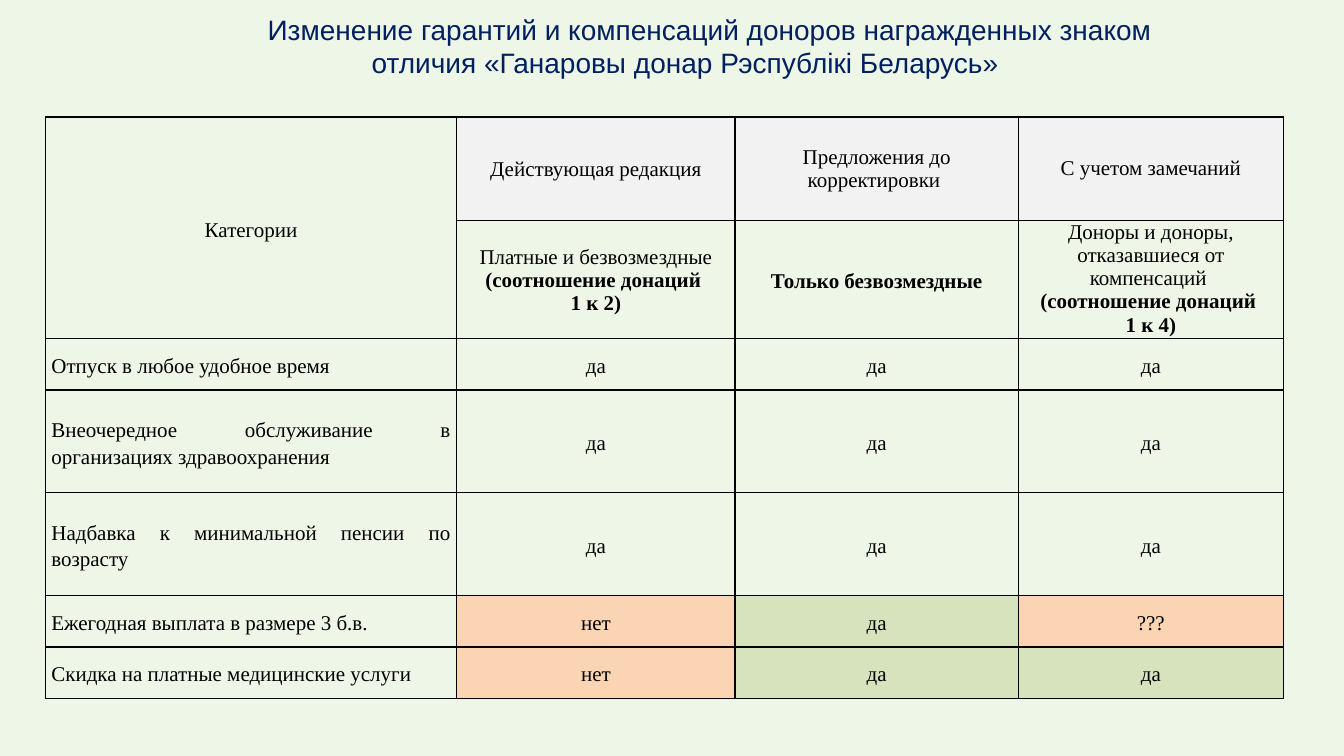
import pptx
import pptx.dml.color
import pptx.enum.text
import pptx.oxml.ns
import pptx.util
from lxml import etree

Inches = pptx.util.Inches
Pt = pptx.util.Pt
ALIGN = pptx.enum.text.PP_ALIGN
ANCHOR = pptx.enum.text.MSO_ANCHOR

COLORS = {
    "background": "EEF6E8",
    "title": "002060",
    "text": "000000",
    "border": "000000",
    "header": "F2F2F2",
    "no": "FBD4B4",
    "yes": "D6E3BC",
}

TITLE = ("Изменение гарантий и компенсаций доноров награжденных знаком "
         "отличия «Ганаровы донар Рэспублiкi Беларусь»")
COLUMN_WIDTHS = [4.08, 2.76, 2.81, 2.63]
ROW_HEIGHTS = [1.03, 1.17, 0.51, 1.02, 1.02, 0.51, 0.51]

LOOSE = {"line_spacing": 1.15, "space_after": Pt(10)}
TIGHT = {"line_spacing": 1.0, "space_after": Pt(0)}

# Each paragraph is a list of (text, bold) runs.
EDITIONS = [
    ([[("Действующая редакция", False)]], {"space_after": Pt(10)}),
    ([[("Предложения до корректировки ", False)]], TIGHT),
    ([[("С учетом замечаний", False)]], TIGHT),
]
RATIO = "(соотношение донаций "
DONATIONS = [
    ([[("Платные и безвозмездные ", False), (RATIO, True)],
      [("1 к 2)", True)]], TIGHT),
    ([[("Только безвозмездные", True)]], LOOSE),
    ([[("Доноры и доноры, отказавшиеся от компенсаций ", False)],
      [(RATIO, True)], [("1 к 4)", True)]], TIGHT),
]
GUARANTEES = [
    ("Отпуск в любое удобное время", ["да", "да", "да"], None),
    ("Внеочередное обслуживание в организациях здравоохранения",
     ["да", "да", "да"], None),
    ("Надбавка к минимальной пенсии по возрасту", ["да", "да", "да"], None),
    ("Ежегодная выплата в размере 3 б.в.", ["нет", "да", "???"],
     ["no", "yes", "no"]),
    ("Скидка на платные медицинские услуги", ["нет", "да", "да"],
     ["no", "yes", "yes"]),
]


def rgb(name):
    return pptx.dml.color.RGBColor.from_string(COLORS[name])


def apply(target, values):
    for name, value in values.items():
        setattr(target, name, value)


class SlideBuilder:
    def __init__(self, prs):
        self.slide = prs.slides.add_slide(prs.slide_layouts[5])
        self.title_font = {"name": "Arial", "size": Pt(20), "bold": False}
        self.cell_font = {"name": "Times New Roman", "size": Pt(15)}
        fill = self.slide.background.fill
        fill.solid()
        fill.fore_color.rgb = rgb("background")

    def title(self, text, left, top, width, height):
        sp = self.slide.shapes.title
        apply(sp, {"left": Inches(left), "top": Inches(top),
                   "width": Inches(width), "height": Inches(height)})
        tf = sp.text_frame
        apply(tf, {"word_wrap": True, "vertical_anchor": ANCHOR.MIDDLE,
                   "auto_size": pptx.enum.text.MSO_AUTO_SIZE.NONE})
        p = tf.paragraphs[0]
        p.alignment = ALIGN.CENTER
        p._p.get_or_add_pPr().set("indent", str(Inches(0.49)))
        self.run(p, text, self.title_font, "title")

    def run(self, p, text, font, color):
        r = p.add_run()
        r.text = text
        apply(r.font, font)
        r.font.color.rgb = rgb(color)

    def table(self, left, top, widths, heights):
        table = self.slide.shapes.add_table(
            len(heights), len(widths), Inches(left), Inches(top),
            Inches(sum(widths)), Inches(sum(heights))).table
        apply(table, {"first_row": False, "horz_banding": False})
        for column, width in zip(table.columns, widths):
            column.width = Inches(width)
        for row, height in zip(table.rows, heights):
            row.height = Inches(height)
        for cell in table.iter_cells():
            self.borders(cell)
            cell.fill.background()
        return table

    def borders(self, cell):
        qn = pptx.oxml.ns.qn
        tcPr = cell._tc.get_or_add_tcPr()
        for side in ("lnL", "lnR", "lnT", "lnB"):
            ln = etree.SubElement(tcPr, qn("a:" + side), w=str(Pt(1)))
            solid = etree.SubElement(ln, qn("a:solidFill"))
            etree.SubElement(solid, qn("a:srgbClr"), val=COLORS["border"])

    def cell(self, table, row, col, paragraphs, spacing=LOOSE,
             align=ALIGN.CENTER, fill=None, anchor=ANCHOR.MIDDLE):
        cell = table.cell(row, col)
        last = col == len(table.columns) - 1
        side, top = (0, 0) if last else (0.06, 0.01)
        apply(cell, {"margin_left": Inches(side), "margin_right": Inches(side),
                     "margin_top": Inches(top), "margin_bottom": 0,
                     "vertical_anchor": anchor})
        if fill:
            cell.fill.solid()
            cell.fill.fore_color.rgb = rgb(fill)
        tf = cell.text_frame
        for i, runs in enumerate(paragraphs):
            p = tf.add_paragraph() if i else tf.paragraphs[0]
            apply(p, {"alignment": align, **spacing})
            for text, bold in runs:
                self.run(p, text, {**self.cell_font, "bold": bold}, "text")


def main():
    prs = pptx.Presentation()
    apply(prs, {"slide_width": Inches(13.33), "slide_height": Inches(7.5)})
    s = SlideBuilder(prs)
    s.title(TITLE, 1.67, -0.25, 10.25, 1.41)

    table = s.table(0.45, 1.16, COLUMN_WIDTHS, ROW_HEIGHTS)
    table.cell(0, 0).merge(table.cell(1, 0))
    s.cell(table, 0, 0, [[("Категории", False)]])
    for col, (paragraphs, spacing) in enumerate(EDITIONS, 1):
        s.cell(table, 0, col, paragraphs, spacing, fill="header")
    for col, (paragraphs, spacing) in enumerate(DONATIONS, 1):
        anchor = ANCHOR.TOP if col == len(DONATIONS) else ANCHOR.MIDDLE
        s.cell(table, 1, col, paragraphs, spacing, anchor=anchor)
    for row, (label, answers, fills) in enumerate(GUARANTEES, 2):
        s.cell(table, row, 0, [[(label, False)]], align=ALIGN.JUSTIFY)
        for col, answer in enumerate(answers, 1):
            fill = fills[col - 1] if fills else None
            s.cell(table, row, col, [[(answer, False)]], fill=fill)

    prs.save("out.pptx")


if __name__ == "__main__":
    main()
